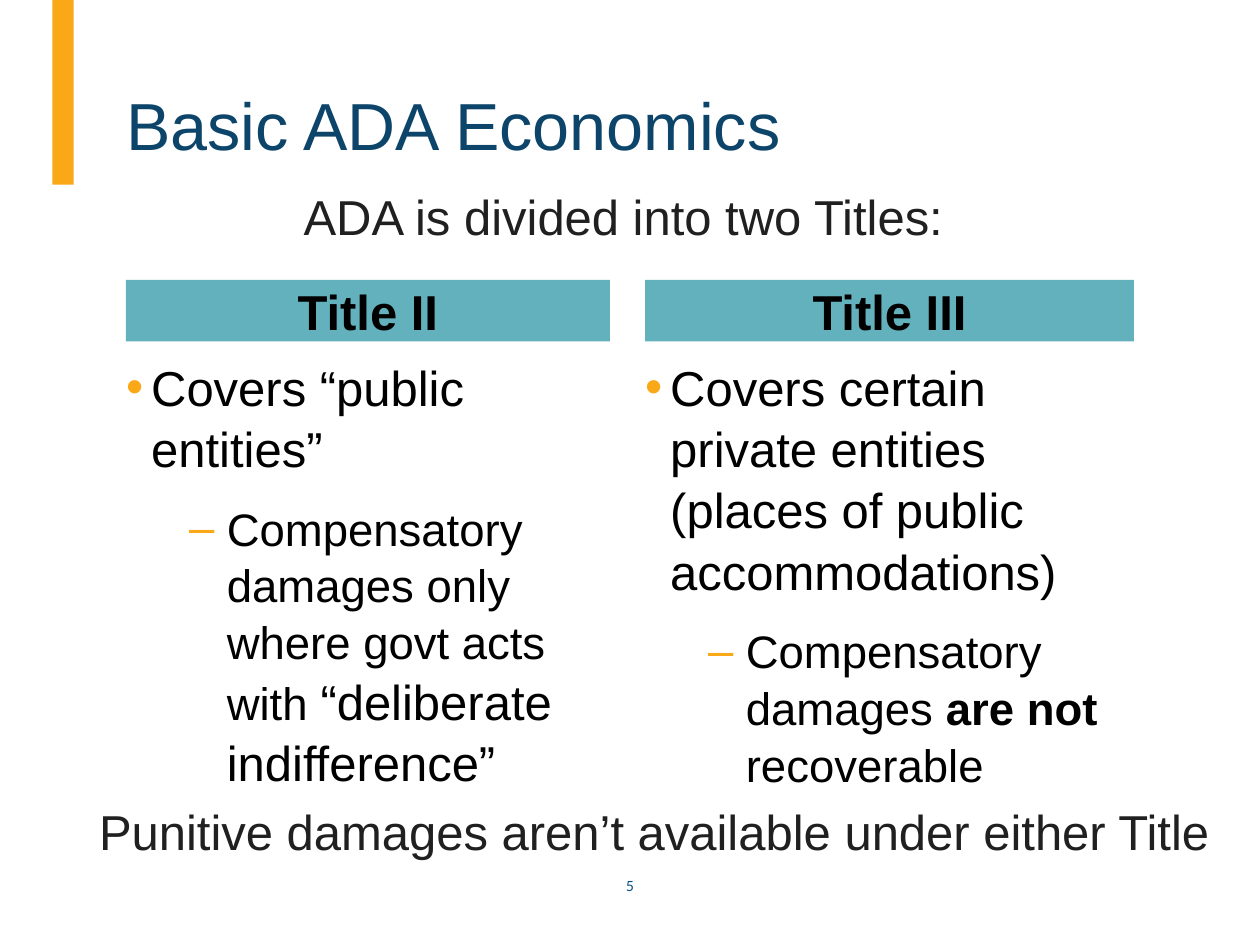
from pptx import Presentation
from pptx.dml.color import RGBColor
from pptx.enum.shapes import MSO_SHAPE as Shape
from pptx.enum.text import MSO_ANCHOR as Anchor, PP_ALIGN as Align
from pptx.oxml.ns import qn
from pptx.util import Pt
from lxml.etree import SubElement

COLORS = {
    "accent": "FAA818",
    "heading": "0D456A",
    "band": "63B1BC",
    "body": "000000",
    "statement": "202021",
    "number": "064D83",
}
COLUMN_TOP, COLUMN_WIDTH = 203, 279.4
COLUMNS = [
    (72, 276.5, "Title II", "Covers “public entities”", [
        ("Compensatory damages only where govt acts with ", 26, False),
        ("“deliberate indifference”", 28, False),
    ]),
    (368.6, 279.4, "Title III",
     "Covers certain private entities (places of public accommodations)", [
        ("Compensatory damages ", 26, False),
        ("are not ", 26, True),
        ("recoverable", 26, False),
    ]),
]


def rgb(name):
    return RGBColor.from_string(COLORS[name])


def add_run(paragraph, text, size, color="body", bold=False, font="Arial"):
    run = paragraph.add_run()
    run.text = text
    run.font.name = font
    run.font.size = Pt(size)
    run.font.bold = bold
    run.font.color.rgb = rgb(color)


def set_frame(frame, anchor=Anchor.TOP, margins=(0, 0, 0, 0)):
    frame.word_wrap = True
    frame.vertical_anchor = anchor
    (frame.margin_left, frame.margin_top,
     frame.margin_right, frame.margin_bottom) = map(Pt, margins)
    return frame


def add_text(slide, left, top, width, height, **frame_options):
    box = slide.shapes.add_textbox(Pt(left), Pt(top), Pt(width), Pt(height))
    return set_frame(box.text_frame, **frame_options)


def add_band(slide, left, top, width, height, color):
    band = slide.shapes.add_shape(
        Shape.RECTANGLE, Pt(left), Pt(top), Pt(width), Pt(height))
    band.shadow.inherit = False
    band.fill.solid()
    band.fill.fore_color.rgb = rgb(color)
    band.line.fill.background()
    return set_frame(band.text_frame, Anchor.MIDDLE)


def format_bullet(paragraph, mark, margin, indent):
    paragraph.line_spacing = 1.04
    paragraph.space_after = Pt(12)
    properties = paragraph._p.get_or_add_pPr()
    properties.set("marL", str(Pt(margin)))
    properties.set("indent", str(Pt(-indent)))
    bullet_color = SubElement(properties, qn("a:buClr"))
    SubElement(bullet_color, qn("a:srgbClr"), val=COLORS["accent"])
    SubElement(properties, qn("a:buFont"), typeface="Arial")
    SubElement(properties, qn("a:buChar"), char=mark)


def add_title(slide, text):
    title = slide.shapes.title
    title.left, title.top, title.width, title.height = map(Pt, (72, 28, 576, 65.5))
    heading = set_frame(title.text_frame, Anchor.BOTTOM).paragraphs[0]
    heading.alignment = Align.LEFT
    add_run(heading, text, 38, "heading")


def add_column(slide, left, band_width, name, coverage, damages):
    header = add_band(slide, left, 160, band_width, 35.2, "band").paragraphs[0]
    header.alignment = Align.CENTER
    add_run(header, name, 28, bold=True)

    details = add_text(slide, left, COLUMN_TOP, COLUMN_WIDTH, 242)
    scope = details.paragraphs[0]
    format_bullet(scope, "•", 14.4, 14.4)
    add_run(scope, coverage, 28)
    remedy = details.add_paragraph()
    remedy.level = 1
    format_bullet(remedy, "–", 57.6, 21.6)
    for text, size, bold in damages:
        add_run(remedy, text, size, bold=bold)


def add_statement(slide, text, bounds, margins, alignment):
    statement = add_text(slide, *bounds, margins=margins).paragraphs[0]
    statement.alignment = alignment
    add_run(statement, text, 28, "statement")


def add_slide_number(slide, number):
    label = add_text(slide, 324, 500.4, 72, 12.2, anchor=Anchor.MIDDLE).paragraphs[0]
    label.alignment = Align.CENTER
    add_run(label, number, 8, "number", font="Lato")


def main():
    deck = Presentation()
    deck.slide_width, deck.slide_height = Pt(720), Pt(540)
    slide = deck.slides.add_slide(deck.slide_layouts[5])
    add_band(slide, 30, 0, 12.2, 105.6, "accent")
    add_slide_number(slide, "5")
    add_title(slide, "Basic ADA Economics")
    for column in COLUMNS:
        add_column(slide, *column)
    add_statement(slide, "ADA is divided into two Titles: ",
                  (72, 103, 576, 41), (7.2, 3.6, 7.2, 3.6), Align.CENTER)
    add_statement(slide, "Punitive damages aren’t available under either Title",
                  (49.5, 445, 671, 49.7), (7.2, 13, 7.2, 3.6), Align.LEFT)
    deck.save("out.pptx")


if __name__ == "__main__":
    main()
